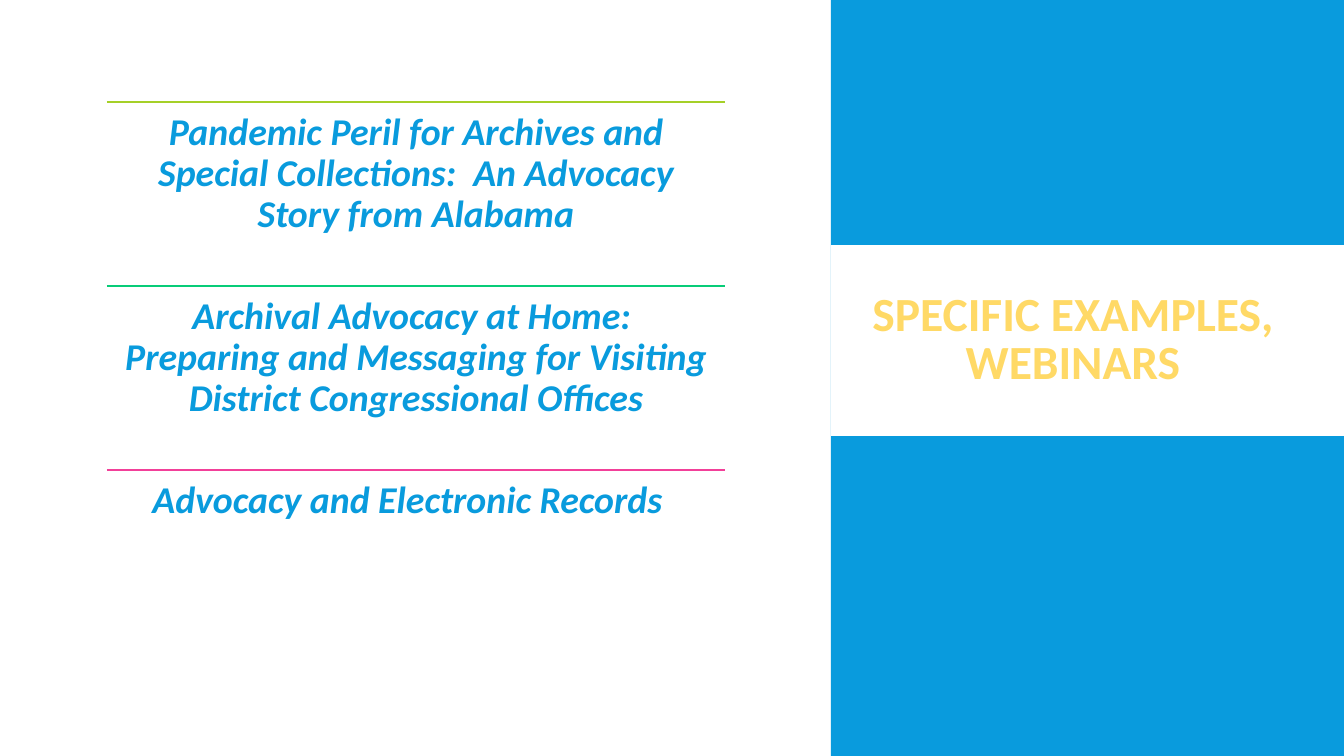
from pptx import Presentation
from pptx import util as u
from pptx.dml.color import RGBColor
from pptx.enum import shapes, text
from pptx.oxml import xmlchemy

COLORS = {
    "blue": "099BDD",
    "white": "FFFFFF",
    "yellow": "FFD966",
    "green": "A5D028",
    "teal": "08CC78",
    "pink": "F24099",
}
WIDTH, HEIGHT = 1344, 756
PANEL_LEFT = 831
ROW_LEFT, ROW_TOP, ROW_WIDTH, ROW_HEIGHT = 107, 102, 618, 184
WEBINARS = [
    ("green", "Pandemic Peril for Archives and Special Collections:  An Advocacy Story from Alabama"),
    ("teal", "Archival Advocacy at Home:  Preparing and Messaging for Visiting District Congressional Offices"),
    ("pink", "Advocacy and Electronic Records  "),
]


def px(length):
    return u.Emu(round(length * 914400 / 100.8))


def rgb(name):
    return RGBColor.from_string(COLORS[name])


class SlideBuilder:
    """Draws styled elements on the current slide."""

    font_name = "Calibri"

    def __init__(self, slide):
        self.slide = slide

    def set_text(self, shape, content, size, color, spacing, anchor, inset, italic=False):
        frame = shape.text_frame
        frame.text = content
        frame.word_wrap = True
        frame.auto_size = text.MSO_AUTO_SIZE.NONE
        frame.vertical_anchor = anchor
        frame.margin_left = frame.margin_right = px(inset)
        frame.margin_top = frame.margin_bottom = px(inset)
        paragraph = frame.paragraphs[0]
        paragraph.alignment = text.PP_ALIGN.CENTER
        paragraph.line_spacing = spacing
        font = paragraph.font
        font.name, font.size = self.font_name, u.Pt(size)
        font.bold, font.italic = True, italic
        font.color.rgb = rgb(color)

    def rectangle(self, left, top, width, height, color):
        shape = self.slide.shapes.add_shape(
            shapes.MSO_SHAPE.RECTANGLE, px(left), px(top), px(width), px(height))
        shape.shadow.inherit = False
        shape.fill.solid()
        shape.fill.fore_color.rgb = rgb(color)
        shape.line.fill.background()

    def title(self, left, top, width, height, content):
        shape = self.slide.shapes.title
        shape.left, shape.top = px(left), px(top)
        shape.width, shape.height = px(width), px(height)
        self.set_text(shape, content, 34, "yellow", 0.85, text.MSO_ANCHOR.MIDDLE, 8)
        tree = self.slide.shapes.element
        tree.remove(shape.element)
        tree.append(shape.element)

    def rule(self, left, top, width, color):
        connector = self.slide.shapes.add_connector(
            shapes.MSO_CONNECTOR.STRAIGHT, px(left), px(top), px(left + width), px(top))
        connector.line.color.rgb = rgb(color)
        connector.line.width = u.Pt(1)
        connector.element.spPr.append(xmlchemy.OxmlElement("a:effectLst"))

    def entry(self, left, top, width, height, content):
        box = self.slide.shapes.add_textbox(px(left), px(top), px(width), px(height))
        self.set_text(box, content, 27, "blue", 0.9, text.MSO_ANCHOR.TOP, 11, italic=True)


def main():
    presentation = Presentation()
    presentation.slide_width, presentation.slide_height = px(WIDTH), px(HEIGHT)
    title_only = presentation.slide_layouts.get_by_name("Title Only")
    builder = SlideBuilder(presentation.slides.add_slide(title_only))

    panel_width = WIDTH - PANEL_LEFT
    builder.rectangle(PANEL_LEFT, 0, panel_width, HEIGHT, "blue")
    builder.rectangle(PANEL_LEFT, 245, panel_width, 191, "white")
    builder.title(845, 258, 456, 166, "SPECIFIC EXAMPLES, WEBINARS")

    for index, (color, content) in enumerate(WEBINARS):
        top = ROW_TOP + index * ROW_HEIGHT
        builder.rule(ROW_LEFT, top, ROW_WIDTH, color)
        builder.entry(ROW_LEFT, top, ROW_WIDTH, ROW_HEIGHT, content)

    presentation.save("out.pptx")


if __name__ == "__main__":
    main()
